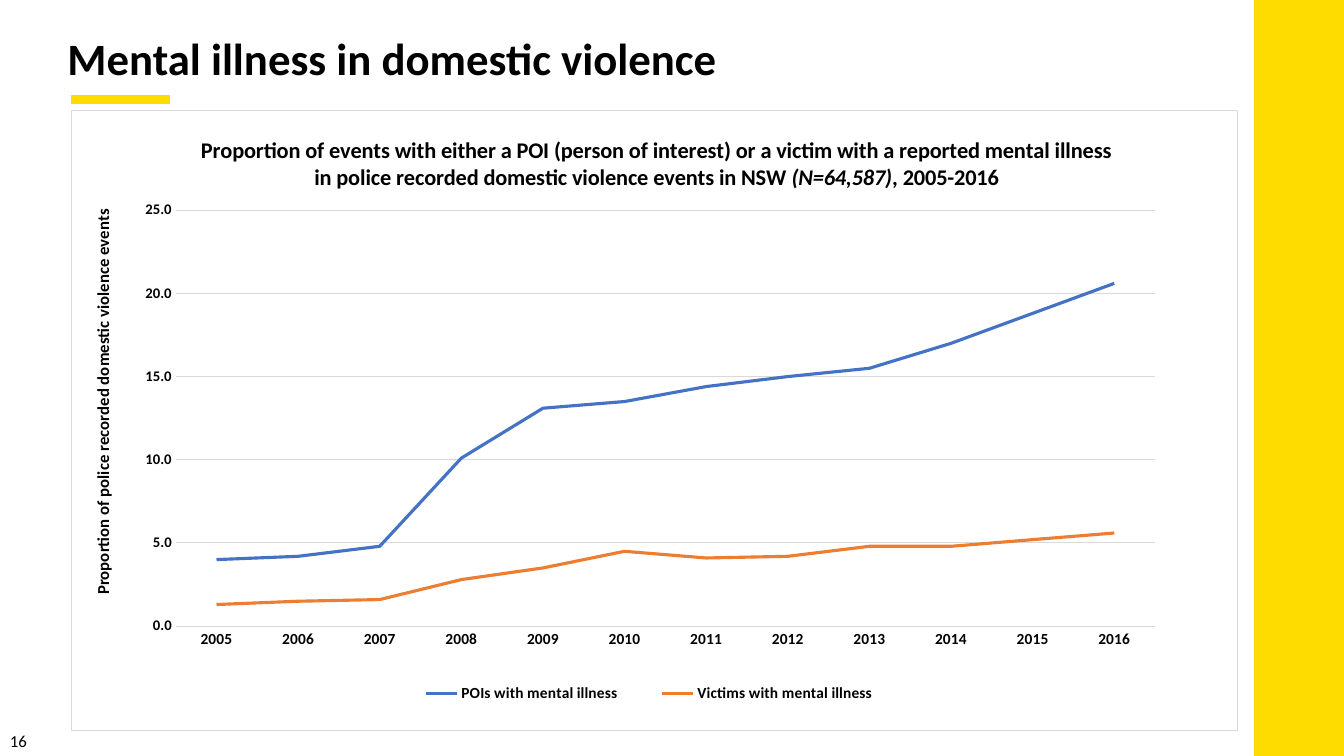
from collections import namedtuple
from dataclasses import dataclass

from lxml import etree
from pptx import Presentation
from pptx.chart.data import CategoryChartData
from pptx.dml.color import RGBColor
from pptx.enum.chart import XL_CHART_TYPE as ChartType
from pptx.enum.chart import XL_LEGEND_POSITION as LegendPosition
from pptx.enum.chart import XL_TICK_MARK as TickMark
from pptx.enum.shapes import MSO_CONNECTOR as Connector
from pptx.enum.shapes import MSO_SHAPE as Shape
from pptx.oxml import parse_xml
from pptx.oxml.ns import nsdecls, qn
from pptx.util import Cm, Pt

Box = namedtuple("Box", "left top width height")


@dataclass(frozen=True)
class Theme:
    font: str = "Calibri"
    ink: str = "000000"
    paper: str = "FFFFFF"
    accent: str = "FFDC00"
    grid: str = "D9D9D9"
    poi: str = "4472C4"
    victim: str = "ED7D31"
    heading: float = 32
    chart_title: float = 16
    axis_title: float = 12
    value_labels: float = 10.5
    labels: float = 11
    chart_base: float = 10
    page_number: float = 12
    hairline: float = 0.75
    series_line: float = 2.25
    rule: float = 6


THEME = Theme()
YEARS = [str(year) for year in range(2005, 2017)]
SERIES = [
    ("POIs with mental illness", THEME.poi,
     [4, 4.2, 4.8, 10.1, 13.1, 13.5, 14.4, 15, 15.5, 17, 18.8, 20.6]),
    ("Victims with mental illness", THEME.victim,
     [1.3, 1.5, 1.6, 2.8, 3.5, 4.5, 4.1, 4.2, 4.8, 4.8, 5.2, 5.6]),
]
CHART_TITLE = [
    ("Proportion of events with either a POI (person of interest) or a victim "
     "with a reported mental illness in police recorded domestic violence "
     "events in NSW ", False),
    ("(N=64,587)", True),
    (", 2005-2016", False),
]


def rgb(value):
    return RGBColor.from_string(value)


def style_font(font, size, bold=False):
    font.name = THEME.font
    font.size = Pt(size)
    font.bold = bold
    font.color.rgb = rgb(THEME.ink)


def style_line(line, color, width):
    line.color.rgb = rgb(color)
    line.width = Pt(width)


def add_label(slide, box, text, size, bold=False, wrap=True):
    frame = slide.shapes.add_textbox(*box).text_frame
    frame.word_wrap = wrap
    paragraph = frame.paragraphs[0]
    paragraph.text = text
    style_font(paragraph.font, size, bold)


def add_side_band(slide, box):
    band = slide.shapes.add_shape(Shape.RECTANGLE, *box)
    band.shadow.inherit = False
    band.fill.solid()
    band.fill.fore_color.rgb = rgb(THEME.accent)
    band.line.fill.background()


def add_heading(slide, box, text):
    add_label(slide, box, text, THEME.heading, bold=True)
    start = box.left + Cm(0.35)
    level = box.top + Cm(1.87)
    underline = slide.shapes.add_connector(
        Connector.STRAIGHT, start, level, start + Cm(2.49), level)
    style_line(underline.line, THEME.accent, THEME.rule)
    etree.SubElement(underline._element.spPr, qn("a:effectLst"))


def set_layout(parent, index, inner=False, **fractions):
    for existing in parent.findall(qn("c:layout")):
        parent.remove(existing)
    layout = etree.Element(qn("c:layout"))
    manual = etree.SubElement(layout, qn("c:manualLayout"))
    settings = {"layoutTarget": "inner"} if inner else {}
    settings.update(xMode="edge", yMode="edge", **fractions)
    for name, value in settings.items():
        etree.SubElement(manual, qn(f"c:{name}")).set("val", str(value))
    parent.insert(index, layout)


def frame_chart(chart):
    border = parse_xml(
        f'<c:spPr {nsdecls("c", "a")}>'
        f'<a:solidFill><a:srgbClr val="{THEME.paper}"/></a:solidFill>'
        f'<a:ln w="{Pt(THEME.hairline)}"><a:solidFill>'
        f'<a:srgbClr val="{THEME.grid}"/></a:solidFill></a:ln></c:spPr>')
    chart._chartSpace.chart.addnext(border)


def style_titles(chart):
    title = chart.chart_title
    paragraph = title.text_frame.paragraphs[0]
    style_font(paragraph.font, THEME.chart_title, bold=True)
    for text, italic in CHART_TITLE:
        run = paragraph.add_run()
        run.text = text
        style_font(run.font, THEME.chart_title, bold=True)
        run.font.italic = italic
    set_layout(title._element, 1, x=0.108, y=0.035)

    axis_title = chart.value_axis.axis_title
    paragraph = axis_title.text_frame.paragraphs[0]
    paragraph.text = "Proportion of police recorded domestic violence events"
    style_font(paragraph.font, THEME.axis_title, bold=True)
    set_layout(axis_title._element, 1, x=0.014, y=0.155)


def style_axes(chart):
    years, shares = chart.category_axis, chart.value_axis
    for axis, size in ((years, THEME.labels), (shares, THEME.value_labels)):
        axis.major_tick_mark = axis.minor_tick_mark = TickMark.NONE
        style_font(axis.tick_labels.font, size, bold=True)
    style_line(years.format.line, THEME.grid, THEME.hairline)
    shares.format.line.fill.background()
    shares.minimum_scale, shares.maximum_scale = 0, 25
    shares.major_unit = 5
    shares.tick_labels.number_format = "0.0"
    shares.tick_labels.number_format_is_linked = False
    style_line(shares.major_gridlines.format.line, THEME.grid, THEME.hairline)


def add_trend_chart(slide, box):
    data = CategoryChartData(number_format="0.0")
    data.categories = YEARS
    for name, _, shares in SERIES:
        data.add_series(name, shares)
    chart = slide.shapes.add_chart(ChartType.LINE, *box, data).chart
    style_font(chart.font, THEME.chart_base)
    frame_chart(chart)
    style_titles(chart)
    style_axes(chart)

    plot = chart.plots[0]
    plot.vary_by_categories = False
    for series, (_, color, _) in zip(plot.series, SERIES):
        series.smooth = False
        style_line(series.format.line, color, THEME.series_line)
    set_layout(chart._chartSpace.chart.plotArea, 0, inner=True,
               x=0.089, y=0.161, w=0.84, h=0.671)

    chart.has_legend = True
    legend = chart.legend
    legend.position = LegendPosition.RIGHT
    legend.include_in_layout = False
    style_font(legend.font, THEME.labels, bold=True)
    set_layout(legend._element, 1, x=0.27, y=0.91, w=0.45, h=0.06)


def build_slide(deck):
    slide = deck.slides.add_slide(deck.slide_layouts[6])
    add_side_band(slide, Box(Cm(31.6), 0, Cm(2.27), deck.slide_height))
    add_heading(slide, Box(Cm(1.45), Cm(0.64), Cm(31.78), Cm(1.63)),
                "Mental illness in domestic violence")
    add_trend_chart(slide, Box(Cm(1.8), Cm(2.77), Cm(29.41), Cm(15.65)))
    add_label(slide, Box(0, Cm(18.29), Cm(0.94), Cm(0.76)), "16",
              THEME.page_number, wrap=False)


def main():
    deck = Presentation()
    deck.slide_width, deck.slide_height = Cm(33.87), Cm(19.05)
    build_slide(deck)
    deck.save("out.pptx")


if __name__ == "__main__":
    main()
